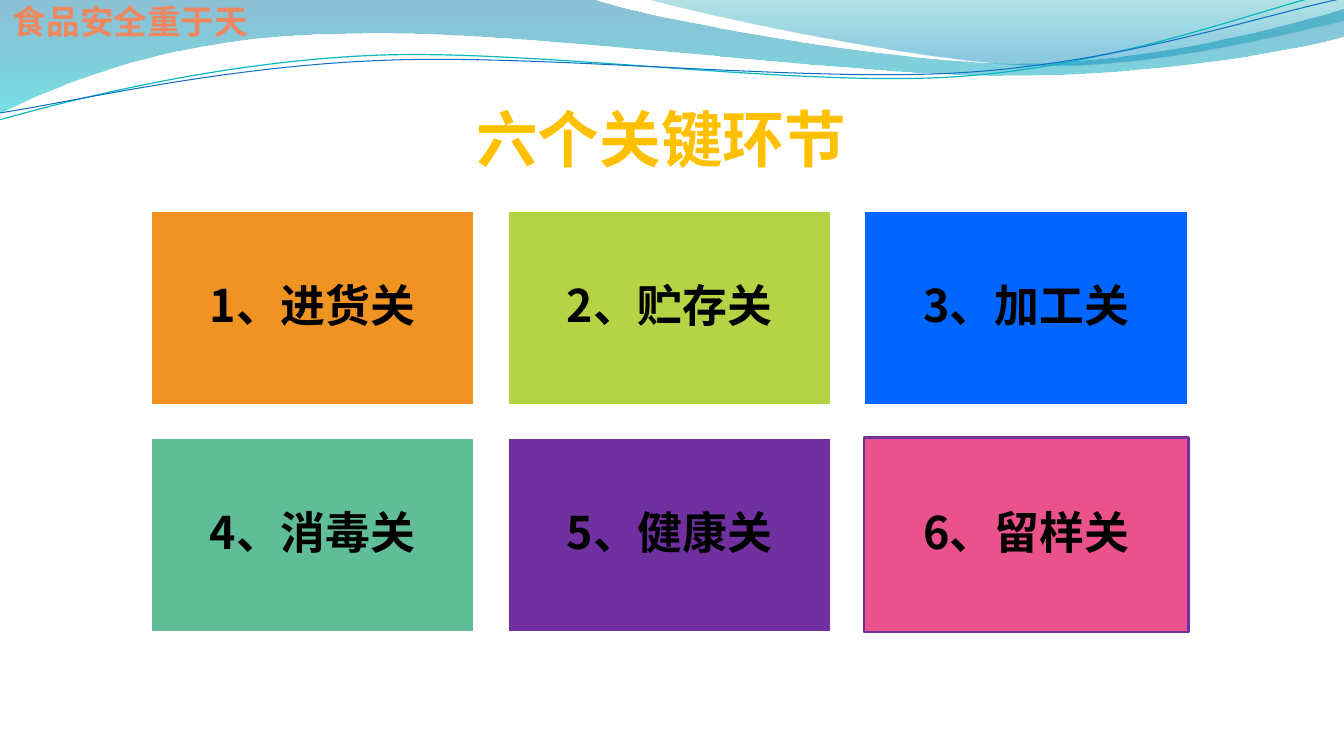
from dataclasses import dataclass
from math import cos, radians, sin

from lxml import etree
from pptx import Presentation
from pptx.dml.color import RGBColor
from pptx.enum.shapes import MSO_SHAPE
from pptx.enum.text import MSO_ANCHOR, MSO_AUTO_SIZE, PP_ALIGN
from pptx.oxml.ns import qn
from pptx.shapes.autoshape import Shape
from pptx.slide import Slide
from pptx.text.text import TextFrame
from pptx.util import Inches, Pt

RECTANGLE = MSO_SHAPE.RECTANGLE
CENTER = PP_ALIGN.CENTER
MIDDLE = MSO_ANCHOR.MIDDLE
BOTTOM = MSO_ANCHOR.BOTTOM
GROW = MSO_AUTO_SIZE.SHAPE_TO_FIT_TEXT

FONT = "Noto Sans CJK SC"
RIPPLE_TILT = -2.7
COLUMNS = 3
CARD_WIDTH, CARD_HEIGHT, CARD_GAP = 3.22, 1.93, 0.32
CARDS_LEFT, CARDS_TOP = 1.49, 2.09

Point = tuple[float, float]
Segment = tuple[Point, ...]


@dataclass(frozen=True)
class GradientStop:
    position: float
    color: str
    opacity: int


@dataclass(frozen=True)
class Wave:
    start: Point
    segments: list[Segment]
    stops: tuple[GradientStop, GradientStop]


@dataclass(frozen=True)
class Ripple:
    start: Point
    segments: list[Segment]
    center: Point
    color: str
    width: float


@dataclass(frozen=True)
class Checkpoint:
    label: str
    color: str
    border: str = "FFFFFF"


WAVES = [
    Wave(
        (0, -0.01),
        [
            ((5.87, -0.01),),
            ((6.34, 0.17), (8.85, 0.63), (10.11, 0.63)),
            ((11.38, 0.63), (12.78, 0.26), (13.33, 0.09)),
            ((13.35, 0.36),),
            ((13.11, 0.44), (11.6, 0.76), (9.94, 0.75)),
            ((8.29, 0.75), (5.09, 0.28), (3.43, 0.34)),
            ((1.72, 0.35), (0.61, 0.83), (-0.01, 1.13)),
        ],
        (GradientStop(0, "0074A1", 45), GradientStop(1, "00C6CF", 55)),
    ),
    Wave(
        (6.39, -0.01),
        [
            ((6.79, 0.11), (9.09, 0.62), (10.25, 0.65)),
            ((11.41, 0.69), (12.82, 0.32), (13.33, 0.21)),
            ((13.33, 0),),
        ],
        (GradientStop(0, "00A1A9", 30), GradientStop(0.8, "008BBF", 45)),
    ),
]

RIPPLES = [
    Ripple(
        (-0.01, 1.19),
        [
            ((0.64, 1.01), (2.11, 0.62), (3.69, 0.55)),
            ((5.27, 0.48), (7.9, 0.87), (9.5, 0.76)),
            ((11.1, 0.65), (12.52, 0.08), (13.31, -0.1)),
        ],
        (6.65, 0.57), "0AB8BF", 0.85,
    ),
    Ripple(
        (0, 1.12),
        [
            ((0.63, 1.03), (2.18, 0.66), (3.78, 0.6)),
            ((5.37, 0.53), (7.96, 0.82), (9.55, 0.72)),
            ((11.15, 0.62), (12.55, 0.14), (13.34, -0.02)),
        ],
        (6.67, 0.59), "0F6FC6", 0.75,
    ),
]

CHECKPOINTS = [
    Checkpoint("1、进货关", "EF9322"),
    Checkpoint("2、贮存关", "B6D346"),
    Checkpoint("3、加工关", "0066FF"),
    Checkpoint("4、消毒关", "5FBD98"),
    Checkpoint("5、健康关", "7030A0"),
    Checkpoint("6、留样关", "EA528C", "7030A0"),
]


def rgb(value: str) -> RGBColor:
    return RGBColor.from_string(value)


def turn(point: Point, center: Point, degrees: float) -> Point:
    angle = radians(degrees)
    x, y = point[0] - center[0], point[1] - center[1]
    return (center[0] + x * cos(angle) - y * sin(angle),
            center[1] + x * sin(angle) + y * cos(angle))


def add_outline(slide: Slide, start: Point, segments: list[Segment], close: bool) -> Shape:
    points = [(Inches(x), Inches(y)) for segment in segments for x, y in segment]
    builder = slide.shapes.build_freeform(Inches(start[0]), Inches(start[1]))
    builder.add_line_segments(points, close=close)
    outline = builder.convert_to_shape()
    outline.shadow.inherit = False
    steps = iter(list(outline.element.spPr.iter(qn("a:lnTo"))))
    for segment in segments:
        group = [next(steps) for _ in segment]
        if len(group) == 3:
            curve = etree.Element(qn("a:cubicBezTo"))
            group[0].addprevious(curve)
            for step in group:
                curve.append(step[0])
                step.getparent().remove(step)
    return outline


def add_wave(slide: Slide, wave: Wave) -> None:
    band = add_outline(slide, wave.start, wave.segments, True)
    band.line.fill.background()
    band.fill.gradient()
    band.fill.gradient_angle = 270
    for target, stop in zip(band.fill.gradient_stops, wave.stops):
        target.position = stop.position
        target.color.rgb = rgb(stop.color)
    colors = band.element.spPr.iter(qn("a:srgbClr"))
    for color, stop in zip(colors, wave.stops):
        etree.SubElement(color, qn("a:alpha"), val=str(stop.opacity * 1000))


def add_ripple(slide: Slide, ripple: Ripple) -> None:
    start = turn(ripple.start, ripple.center, -RIPPLE_TILT)
    segments = [tuple(turn(point, ripple.center, -RIPPLE_TILT) for point in segment)
                for segment in ripple.segments]
    stroke = add_outline(slide, start, segments, False)
    stroke.rotation = RIPPLE_TILT
    stroke.fill.background()
    stroke.line.color.rgb = rgb(ripple.color)
    stroke.line.width = Pt(ripple.width)


def write(frame: TextFrame, text: str, size: int, color: str) -> None:
    frame.text = text
    frame.word_wrap = True
    paragraph = frame.paragraphs[0]
    paragraph.alignment = CENTER
    font = paragraph.runs[0].font
    font.size = Pt(size)
    font.bold = True
    font.color.rgb = rgb(color)
    font.name = FONT
    properties = paragraph.runs[0]._r.get_or_add_rPr()
    etree.SubElement(properties, qn("a:ea"), typeface=FONT)


def set_margins(frame: TextFrame, left: float, top: float, right: float, bottom: float) -> None:
    frame.margin_left, frame.margin_top = Inches(left), Inches(top)
    frame.margin_right, frame.margin_bottom = Inches(right), Inches(bottom)


def add_heading(slide: Slide) -> None:
    heading = slide.shapes.title
    heading.left, heading.top = Inches(1.85), Inches(0.7)
    heading.width, heading.height = Inches(9.42), Inches(1.03)
    write(heading.text_frame, "六个关键环节", 44, "FFC000")
    heading.text_frame.vertical_anchor = BOTTOM
    set_margins(heading.text_frame, 0, 0.05, 0, 0)
    slide.shapes.element.append(heading.element)


def add_card(slide: Slide, index: int, checkpoint: Checkpoint) -> None:
    row, column = divmod(index, COLUMNS)
    card = slide.shapes.add_shape(
        RECTANGLE,
        Inches(CARDS_LEFT + column * (CARD_WIDTH + CARD_GAP)),
        Inches(CARDS_TOP + row * (CARD_HEIGHT + CARD_GAP)),
        Inches(CARD_WIDTH), Inches(CARD_HEIGHT))
    card.shadow.inherit = False
    card.fill.solid()
    card.fill.fore_color.rgb = rgb(checkpoint.color)
    card.line.color.rgb = rgb(checkpoint.border)
    card.line.width = Pt(2)
    write(card.text_frame, checkpoint.label, 32, "000000")
    card.text_frame.vertical_anchor = MIDDLE
    card.text_frame.paragraphs[0].line_spacing = 0.9
    set_margins(card.text_frame, 0.13, 0.13, 0.13, 0.13)


def add_slogan(slide: Slide) -> None:
    slogan = slide.shapes.add_textbox(Inches(0), Inches(-0.04), Inches(2.59), Inches(0.5))
    write(slogan.text_frame, "食品安全重于天", 24, "ED8760")
    slogan.text_frame.auto_size = GROW


def main() -> None:
    deck = Presentation()
    deck.slide_width, deck.slide_height = Inches(13.33), Inches(7.5)
    slide = deck.slides.add_slide(deck.slide_layouts.get_by_name("Title Only"))
    for wave in WAVES:
        add_wave(slide, wave)
    for ripple in RIPPLES:
        add_ripple(slide, ripple)
    add_heading(slide)
    for index, checkpoint in enumerate(CHECKPOINTS):
        add_card(slide, index, checkpoint)
    add_slogan(slide)
    deck.save("out.pptx")


if __name__ == "__main__":
    main()
